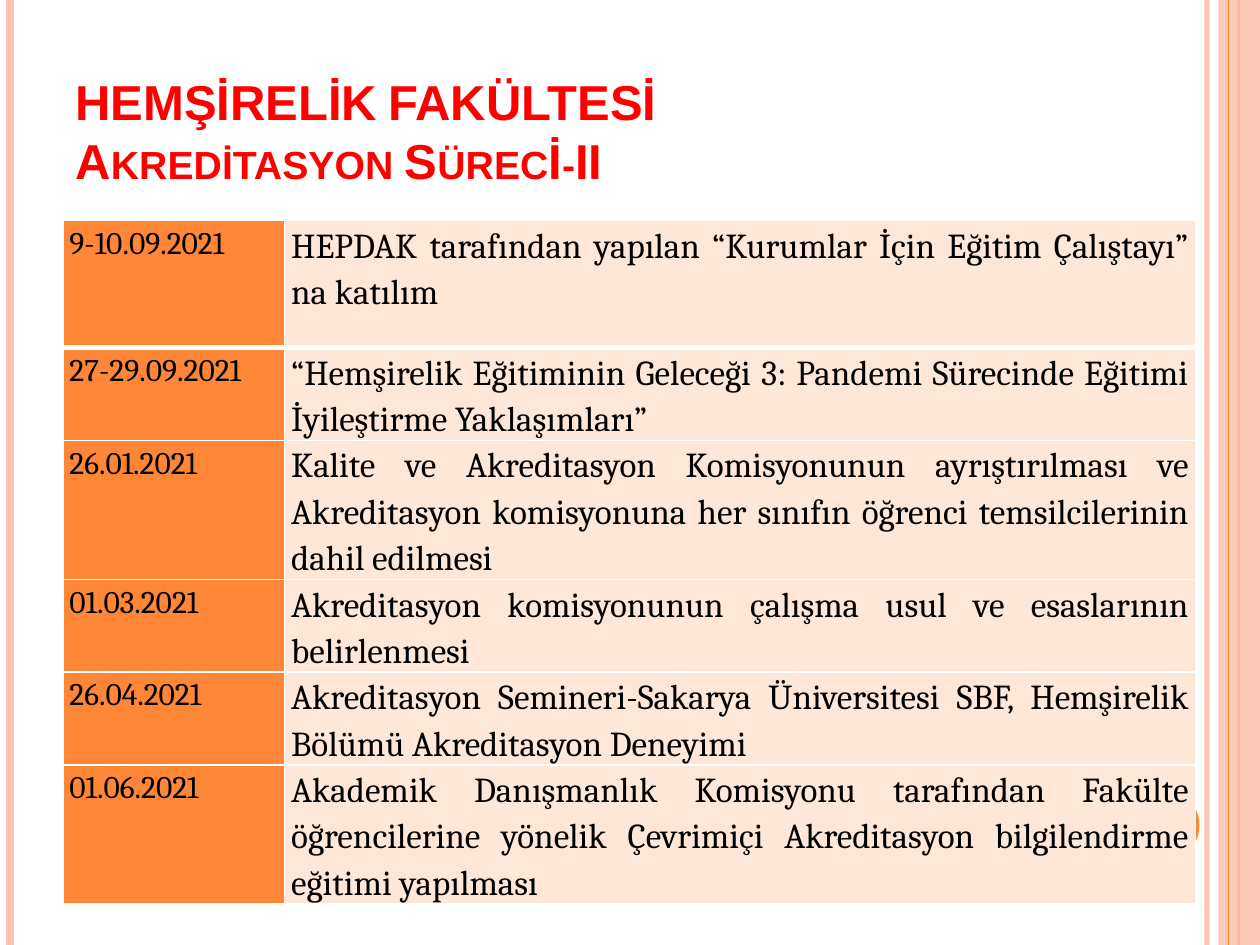
import pptx
import pptx.util
import pptx.dml.color
import pptx.enum.lang
import pptx.enum.shapes
import pptx.enum.text
import pptx.oxml
import pptx.oxml.ns
from dataclasses import dataclass
from lxml import etree

Cm = pptx.util.Cm
Pt = pptx.util.Pt
qn = pptx.oxml.ns.qn


@dataclass(frozen=True)
class Theme:
    accent: str = "FE8637"
    pale_accent: str = "FEC3AE"
    cell: str = "FFE7D7"
    border: str = "FFFFFF"
    title: str = "FF0000"
    text: str = "000000"
    title_font: str = "Arial"
    body_font: str = "Cambria"
    title_size: int = 28
    date_size: int = 18
    event_size: int = 20


THEME = Theme()
WIDTH, HEIGHT = 25.4, 19.05

TITLE_LINES = ("HEMŞİRELİK FAKÜLTESİ", "Akreditasyon Sürecİ-II")

# Row height in cm, date, event
EVENTS = [
    (2.56, "9-10.09.2021", "HEPDAK tarafından yapılan “Kurumlar İçin Eğitim Çalıştayı” na katılım"),
    (1.86, "27-29.09.2021", "“Hemşirelik Eğitiminin Geleceği 3: Pandemi Sürecinde Eğitimi "
                            "İyileştirme Yaklaşımları”"),
    (2.8, "26.01.2021", "Kalite ve Akreditasyon Komisyonunun ayrıştırılması ve Akreditasyon "
                        "komisyonuna her sınıfın öğrenci temsilcilerinin dahil edilmesi"),
    (1.86, "01.03.2021", "Akreditasyon komisyonunun çalışma usul ve esaslarının belirlenmesi"),
    (1.86, "26.04.2021", "Akreditasyon Semineri-Sakarya Üniversitesi SBF, Hemşirelik Bölümü "
                         "Akreditasyon Deneyimi"),
    (2.8, "01.06.2021", "Akademik Danışmanlık Komisyonu tarafından Fakülte öğrencilerine yönelik "
                        "Çevrimiçi Akreditasyon bilgilendirme eğitimi yapılması"),
]


def rgb(value):
    return pptx.dml.color.RGBColor.from_string(value)


def set_opacity(shape, percent):
    """Apply an opacity to the first colour of a shape."""
    color = next(shape._element.spPr.iter(qn("a:srgbClr")))
    etree.SubElement(color, qn("a:alpha")).set("val", str(percent * 1000))


def add_vertical_line(slide, x, top, height, color, width):
    line = slide.shapes.add_connector(
        pptx.enum.shapes.MSO_CONNECTOR.STRAIGHT, Cm(x), Cm(top), Cm(x), Cm(top + height))
    line.line.color.rgb = rgb(color)
    line.line.width = Pt(width)
    etree.SubElement(line._element.spPr, qn("a:effectLst"))
    return line


def add_plain_shape(slide, kind, left, top, width, height, color):
    shape = slide.shapes.add_shape(kind, Cm(left), Cm(top), Cm(width), Cm(height))
    shape.fill.solid()
    shape.fill.fore_color.rgb = rgb(color)
    shape.line.fill.background()
    shape.shadow.inherit = False
    return shape


def add_decoration(slide, left, top, width, height):
    """Stripes along both edges and the round badge."""
    right = left + width
    kinds = pptx.enum.shapes.MSO_SHAPE
    inner_line = add_vertical_line(slide, right - 1.07, top, height, THEME.pale_accent, 3)
    set_opacity(inner_line, 93)
    add_vertical_line(slide, left + 0.2, top, height, THEME.pale_accent, 4.5)
    add_vertical_line(slide, right - 0.43, top, height, THEME.accent, 1.5)
    band = add_plain_shape(slide, kinds.RECTANGLE, right - 0.84, top, 0.84, height,
                           THEME.pale_accent)
    set_opacity(band, 87)
    add_vertical_line(slide, right - 0.64, top, height, THEME.accent, 0.75)
    add_plain_shape(slide, kinds.OVAL, right - 2.74, top + height - 3.17, 1.52, 1.52,
                    THEME.accent)


def fill_title(slide, left, top, width, height):
    title = slide.shapes.title
    title.left, title.top, title.width, title.height = map(Cm, (left, top, width, height))
    frame = title.text_frame
    frame.auto_size = pptx.enum.text.MSO_AUTO_SIZE.NONE
    frame.vertical_anchor = pptx.enum.text.MSO_ANCHOR.BOTTOM
    frame.text = "\v".join(TITLE_LINES)
    paragraph = frame.paragraphs[0]
    paragraph.alignment = pptx.enum.text.PP_ALIGN.LEFT
    font = paragraph.font
    font.name, font.size, font.bold = THEME.title_font, Pt(THEME.title_size), True
    font.color.rgb = rgb(THEME.title)
    for run in paragraph.runs:
        run.font.language_id = pptx.enum.lang.MSO_LANGUAGE_ID.TURKISH
        run._r.get_or_add_rPr().set("cap", "small")


def set_borders(cell, bottom_width):
    properties = cell._tc.get_or_add_tcPr()
    widths = {"a:lnL": 1, "a:lnR": 1, "a:lnT": 1, "a:lnB": bottom_width}
    for position, (tag, width) in enumerate(widths.items()):
        line = etree.Element(qn(tag), w=str(Pt(width)))
        fill = etree.SubElement(line, qn("a:solidFill"))
        etree.SubElement(fill, qn("a:srgbClr")).set("val", THEME.border)
        properties.insert(position, line)


def fill_cell(cell, text, size, color, bottom_width):
    cell.margin_left = cell.margin_right = Cm(0.13)
    cell.margin_top = cell.margin_bottom = 0
    cell.fill.solid()
    cell.fill.fore_color.rgb = rgb(color)
    set_borders(cell, bottom_width)
    cell.text = text
    paragraph = cell.text_frame.paragraphs[0]
    paragraph.alignment = pptx.enum.text.PP_ALIGN.JUSTIFY
    paragraph.line_spacing = 1.15
    paragraph.space_after = Pt(10)
    font = paragraph.font
    font.name, font.size, font.bold = THEME.body_font, Pt(size), False
    font.color.rgb = rgb(THEME.text)


def add_event_table(slide, left, top, width, date_width):
    height = sum(event[0] for event in EVENTS)
    table = slide.shapes.add_table(
        len(EVENTS), 2, Cm(left), Cm(top), Cm(width), Cm(height)).table
    table.first_row = table.horz_banding = False
    table.columns[0].width = Cm(date_width)
    table.columns[1].width = Cm(width - date_width)
    for index, (row_height, date, event) in enumerate(EVENTS):
        table.rows[index].height = Cm(row_height)
        bottom_width = 3 if index == 0 else 1
        fill_cell(table.cell(index, 0), date, THEME.date_size, THEME.accent, bottom_width)
        fill_cell(table.cell(index, 1), event, THEME.event_size, THEME.cell, bottom_width)


def main():
    presentation = pptx.Presentation()
    presentation.slide_width, presentation.slide_height = Cm(WIDTH), Cm(HEIGHT)
    slide = presentation.slides.add_slide(presentation.slide_layouts[5])
    add_decoration(slide, 0, 0, WIDTH, HEIGHT)
    fill_title(slide, 1.27, 0.76, 20.75, 3.18)
    add_event_table(slide, 1.27, 4.45, 22.83, 4.47)
    presentation.save("out.pptx")


if __name__ == "__main__":
    main()
